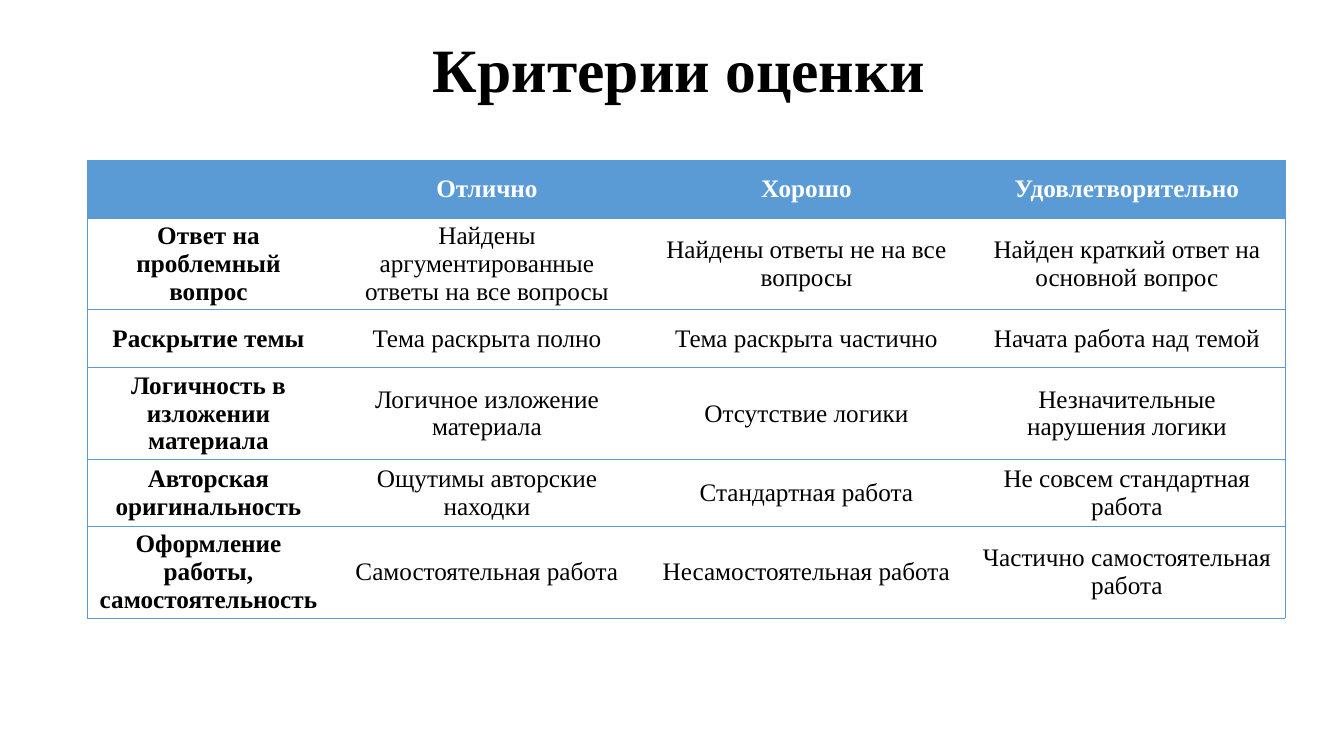
from dataclasses import dataclass

import lxml.etree
import pptx
import pptx.dml.color
import pptx.enum.text
import pptx.oxml.ns
import pptx.table
import pptx.util

BLACK = pptx.dml.color.RGBColor(0x00, 0x00, 0x00)
WHITE = pptx.dml.color.RGBColor(0xFF, 0xFF, 0xFF)
BLUE = pptx.dml.color.RGBColor(0x5B, 0x9B, 0xD5)
FONT = "Times New Roman"
PX_PER_INCH = 100.8
PLAIN_TABLE_STYLE = "{2D5ABB26-0587-4C30-8999-92F81FD0307C}"


@dataclass(frozen=True)
class Grade:
    label: str
    width: int


@dataclass(frozen=True)
class Criterion:
    height: int
    texts: tuple[str, ...]


GRADES = (
    Grade("", 243),
    Grade("Отлично", 314),
    Grade("Хорошо", 325),
    Grade("Удовлетворительно", 316),
)
HEADER = Criterion(58, tuple(grade.label for grade in GRADES))
CRITERIA = (
    Criterion(91, (
        "Ответ на проблемный вопрос",
        "Найдены аргументированные ответы на все вопросы",
        "Найдены ответы не на все вопросы",
        "Найден краткий ответ на основной вопрос",
    )),
    Criterion(58, (
        "Раскрытие темы",
        "Тема раскрыта полно",
        "Тема раскрыта частично",
        "Начата работа над темой",
    )),
    Criterion(91, (
        "Логичность в изложении материала",
        "Логичное изложение материала",
        "Отсутствие логики",
        "Незначительные нарушения логики",
    )),
    Criterion(67, (
        "Авторская оригинальность",
        "Ощутимы авторские находки",
        "Стандартная работа",
        "Не совсем стандартная работа",
    )),
    Criterion(91, (
        "Оформление работы, самостоятельность",
        "Самостоятельная работа",
        "Несамостоятельная работа",
        "Частично самостоятельная работа",
    )),
)


def px(length: int) -> pptx.util.Emu:
    return pptx.util.Emu(round(length * 914400 / PX_PER_INCH))


def format_text(paragraph, size: int, color: pptx.dml.color.RGBColor, bold: bool) -> None:
    paragraph.alignment = pptx.enum.text.PP_ALIGN.CENTER
    paragraph.font.name = FONT
    paragraph.font.size = pptx.util.Pt(size)
    paragraph.font.bold = bold
    paragraph.font.color.rgb = color


def add_border(cell: pptx.table._Cell, side: str) -> None:
    qn = pptx.oxml.ns.qn
    properties = cell._tc.get_or_add_tcPr()
    line = lxml.etree.SubElement(properties, qn(f"a:ln{side}"), w=str(pptx.util.Pt(0.5)))
    fill = lxml.etree.SubElement(line, qn("a:solidFill"))
    lxml.etree.SubElement(fill, qn("a:srgbClr"), val=str(BLUE))


def fill_cell(cell: pptx.table._Cell, text: str, is_header: bool, column: int) -> None:
    cell.text = text
    cell.vertical_anchor = pptx.enum.text.MSO_ANCHOR.MIDDLE
    cell.margin_left = cell.margin_right = px(10)
    cell.margin_top = cell.margin_bottom = px(4)
    format_text(
        cell.text_frame.paragraphs[0],
        18,
        WHITE if is_header else BLACK,
        is_header or column == 0,
    )
    if column == 0:
        add_border(cell, "L")
    if column == len(GRADES) - 1:
        add_border(cell, "R")
    add_border(cell, "T")
    add_border(cell, "B")
    if is_header:
        cell.fill.solid()
        cell.fill.fore_color.rgb = BLUE
    else:
        cell.fill.background()


def add_title(slide) -> None:
    title = slide.shapes.title
    title.left, title.top, title.width, title.height = px(100), px(0), px(1159), px(146)
    title.text_frame.text = "Критерии оценки"
    title.text_frame.vertical_anchor = pptx.enum.text.MSO_ANCHOR.MIDDLE
    heading = title.text_frame.paragraphs[0]
    heading.line_spacing = 0.9
    format_text(heading, 44, BLACK, True)


def add_criteria(slide) -> None:
    rows = (HEADER, *CRITERIA)
    frame = slide.shapes.add_table(
        len(rows), len(GRADES), px(87), px(160),
        px(sum(grade.width for grade in GRADES)), px(sum(row.height for row in rows)),
    )
    criteria = frame.table
    criteria.horz_banding = False
    criteria._tbl.tblPr.find(pptx.oxml.ns.qn("a:tableStyleId")).text = PLAIN_TABLE_STYLE
    for column, grade in enumerate(GRADES):
        criteria.columns[column].width = px(grade.width)
    for index, row in enumerate(rows):
        criteria.rows[index].height = px(row.height)
        for column, text in enumerate(row.texts):
            fill_cell(criteria.cell(index, column), text, row is HEADER, column)


def main() -> None:
    deck = pptx.Presentation()
    deck.slide_width, deck.slide_height = px(1344), px(756)
    slide = deck.slides.add_slide(deck.slide_layouts[5])
    add_title(slide)
    add_criteria(slide)
    deck.save("out.pptx")


if __name__ == "__main__":
    main()
